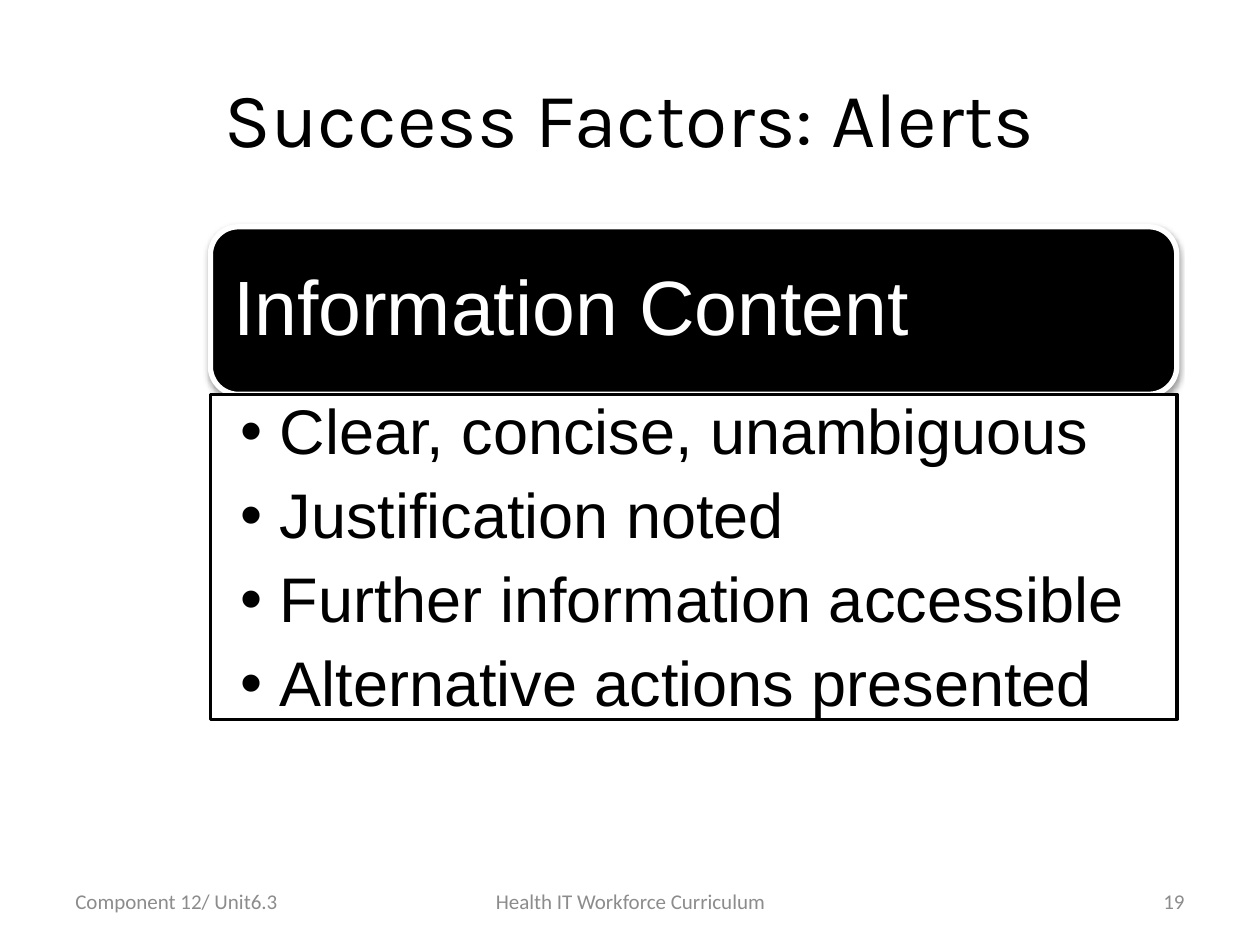
from lxml import etree
from pptx import Presentation
from pptx.dml.color import RGBColor
from pptx.enum.shapes import MSO_SHAPE
from pptx.enum.text import MSO_ANCHOR, PP_ALIGN
from pptx.oxml.ns import qn
from pptx.util import Emu, Pt

EMU_PER_PX = 9144
ROUNDED, RECTANGLE = MSO_SHAPE.ROUNDED_RECTANGLE, MSO_SHAPE.RECTANGLE
TOP, MIDDLE = MSO_ANCHOR.TOP, MSO_ANCHOR.MIDDLE
LEFT, CENTER, RIGHT = PP_ALIGN.LEFT, PP_ALIGN.CENTER, PP_ALIGN.RIGHT
BLACK = RGBColor(0x00, 0x00, 0x00)
WHITE = RGBColor(0xFF, 0xFF, 0xFF)
GRAY = RGBColor(0x8C, 0x8C, 0x8C)
TITLE_FONT, BODY_FONT, FOOTER_FONT = "Karla", "Arial", "Calibri"
BULLET_INDENT = 31


def px(length):
    return Emu(length * EMU_PER_PX)


class SlideBuilder:
    def __init__(self, slide):
        self.slide = slide

    def box(self, kind, area, fill, line, line_width):
        shape = self.slide.shapes.add_shape(kind, *map(px, area))
        shape.shadow.inherit = False
        shape.fill.solid()
        shape.fill.fore_color.rgb = fill
        shape.line.color.rgb = line
        shape.line.width = Pt(line_width)
        return shape

    def drop_shadow(self, shape):
        effects = shape._element.spPr.find(qn("a:effectLst"))
        shadow = etree.SubElement(
            effects, qn("a:outerShdw"), blurRad=str(Pt(3.1)),
            dist=str(Pt(1.6)), dir="5400000", rotWithShape="0")
        color = etree.SubElement(shadow, qn("a:srgbClr"), val=str(BLACK))
        etree.SubElement(color, qn("a:alpha"), val="38000")

    def text(self, area, lines, font, size, color, align=LEFT, anchor=MIDDLE,
             insets=(10, 5, 10, 5), line_spacing=None, space_after=0, bullet=None):
        frame = self.slide.shapes.add_textbox(*map(px, area)).text_frame
        frame.word_wrap = True
        frame.vertical_anchor = anchor
        (frame.margin_left, frame.margin_top,
         frame.margin_right, frame.margin_bottom) = map(px, insets)
        for index, line in enumerate(lines):
            paragraph = frame.add_paragraph() if index else frame.paragraphs[0]
            paragraph.alignment = align
            paragraph.line_spacing = line_spacing
            paragraph.space_after = Pt(space_after)
            if bullet:
                self.bullet(paragraph, bullet)
            run = paragraph.add_run()
            run.text = line
            run.font.name = font
            run.font.size = Pt(size)
            run.font.color.rgb = color

    def bullet(self, paragraph, character):
        properties = paragraph._p.get_or_add_pPr()
        properties.set("marL", str(px(BULLET_INDENT)))
        properties.set("indent", str(px(-BULLET_INDENT)))
        etree.SubElement(properties, qn("a:buFont"), typeface=BODY_FONT)
        etree.SubElement(properties, qn("a:buChar"), char=character)


def main():
    presentation = Presentation()
    presentation.slide_width, presentation.slide_height = px(1000), px(750)
    builder = SlideBuilder(presentation.slides.add_slide(presentation.slide_layouts[6]))

    builder.text((50, 30, 900, 125), ["Success Factors: Alerts"],
                 TITLE_FONT, 44, BLACK, CENTER)

    header_area = (167, 180, 767, 133)
    header = builder.box(ROUNDED, header_area, BLACK, WHITE, 3)
    builder.drop_shadow(header)
    builder.text(header_area, ["Information Content"], BODY_FONT, 44, WHITE,
                 insets=(18, 18, 18, 18), line_spacing=0.9)

    list_area = (167, 313, 767, 258)
    builder.box(RECTANGLE, list_area, WHITE, BLACK, 2)
    factors = ["Clear, concise, unambiguous", "Justification noted",
               "Further information accessible", "Alternative actions presented"]
    builder.text(list_area, factors, BODY_FONT, 36, BLACK, anchor=TOP,
                 insets=(24, 5, 28, 5), line_spacing=0.9, space_after=9, bullet="•")

    footers = [
        (50, 233, "Component 12/ Unit6.3", LEFT),
        (342, 317, "Health IT Workforce Curriculum", CENTER),
        (717, 233, "19", RIGHT),
    ]
    for left, width, wording, align in footers:
        builder.text((left, 695, width, 40), [wording], FOOTER_FONT, 12, GRAY, align)

    presentation.save("out.pptx")


if __name__ == "__main__":
    main()
